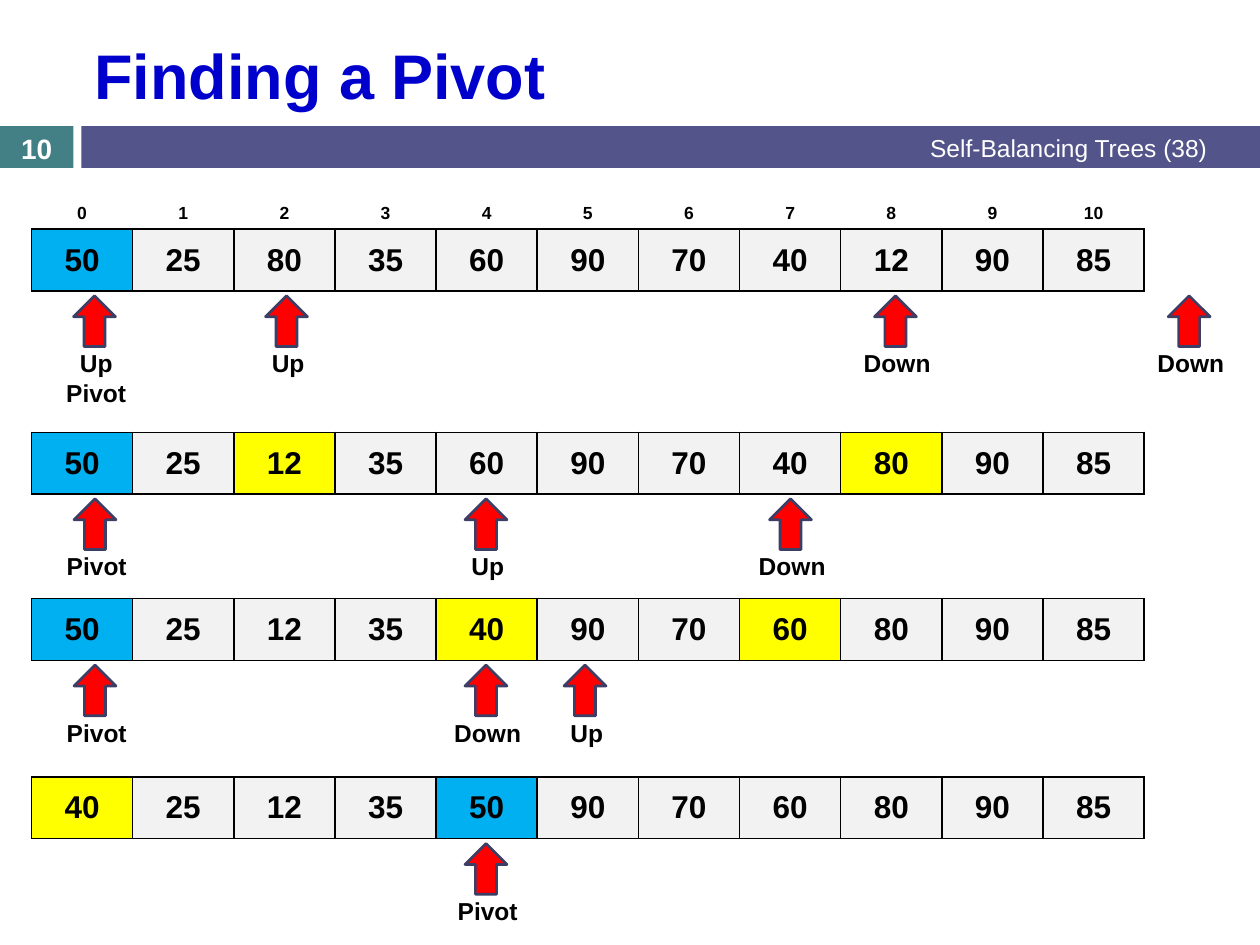
from lxml.etree import SubElement
from pptx import Presentation
from pptx.dml.color import RGBColor
from pptx.enum.shapes import MSO_SHAPE as SHAPE
from pptx.enum.text import MSO_ANCHOR as ANCHOR, PP_ALIGN as ALIGN
from pptx.oxml.ns import qn
from pptx.util import Pt


def color(fmt, value):
    if hasattr(fmt, "solid"):
        fmt.solid()
        fmt = fmt.fore_color
    else:
        fmt = fmt.color
    fmt.rgb = RGBColor.from_string(value)


def write(tf, text, size, value="000000", align=ALIGN.CENTER, bold=True):
    tf.word_wrap = True
    tf.text = text
    for p in tf.paragraphs:
        p.alignment = align
        p.font.name = "Arial"
        p.font.size = Pt(size)
        p.font.bold = bold
        color(p.font, value)


BLUE, YELLOW, GRAY = "00B0F0", "FFFF00", "F2F2F2"
CELL_W, CELL_H, HEAD_H = 57.8, 35.3, 28.8

prs = Presentation()
prs.slide_width, prs.slide_height = Pt(720), Pt(540)
s = prs.slides.add_slide(prs.slide_layouts[5])

for left, width, fill in [(0, 42, "438086"), (46.5, 673.5, "53548A")]:
    sp = s.shapes.add_shape(SHAPE.RECTANGLE, Pt(left), Pt(72), Pt(width), Pt(24))
    sp.shadow.inherit = False
    color(sp.fill, fill)
    sp.line.fill.background()

title = s.shapes.title
title.left, title.top, title.width, title.height = Pt(46.8), Pt(13.7), Pt(642.2), Pt(57.6)
write(title.text_frame, "Finding a Pivot", 36, "0000CC", ALIGN.LEFT)
title.text_frame.vertical_anchor = ANCHOR.MIDDLE

for text, left, width, size, align, bold in [
    ("Self-Balancing Trees (38)", 270, 427, 14, ALIGN.RIGHT, False),
    ("10", 0, 42, 16, ALIGN.CENTER, True),
]:
    tb = s.shapes.add_textbox(Pt(left), Pt(72.5), Pt(width), Pt(24))
    write(tb.text_frame, text, size, "FFFFFF", align, bold)
    tb.text_frame.vertical_anchor = ANCHOR.MIDDLE

steps = [
    (131, [50, 25, 80, 35, 60, 90, 70, 40, 12, 90, 85], {0: BLUE},
     [("Up\nPivot", 42), ("Down", 667.5), ("Up", 151.7), ("Down", 499.7)]),
    (247, [50, 25, 12, 35, 60, 90, 70, 40, 80, 90, 85], {0: BLUE, 2: YELLOW, 8: YELLOW},
     [("Pivot", 42.3), ("Up", 265.7), ("Down", 439.7)]),
    (342, [50, 25, 12, 35, 40, 90, 70, 60, 80, 90, 85], {0: BLUE, 4: YELLOW, 7: YELLOW},
     [("Pivot", 42.3), ("Up", 322.3), ("Down", 265.7)]),
    (444, [40, 25, 12, 35, 50, 90, 70, 60, 80, 90, 85], {0: YELLOW, 4: BLUE},
     [("Pivot", 265.7)]),
]

for step, (top, values, fills, markers) in enumerate(steps):
    heights = [HEAD_H, CELL_H] if step == 0 else [CELL_H]
    table_top = top + CELL_H - sum(heights)
    table = s.shapes.add_table(len(heights), len(values), Pt(18), Pt(table_top),
                               Pt(CELL_W * len(values)), Pt(sum(heights))).table
    table.first_row = table.horz_banding = False
    for row, height in zip(table.rows, heights):
        row.height = Pt(height)
    for i, value in enumerate(values):
        table.columns[i].width = Pt(CELL_W)
        if step == 0:
            index = table.cell(0, i)
            write(index.text_frame, str(i), 10)
            index.vertical_anchor = ANCHOR.BOTTOM
            color(index.fill, "FFFFFF")
        cell = table.cell(len(heights) - 1, i)
        write(cell.text_frame, str(value), 18)
        cell.vertical_anchor = ANCHOR.MIDDLE
        for side in "LRTB":
            ln = SubElement(cell._tc.get_or_add_tcPr(), qn(f"a:ln{side}"), w=str(Pt(1)))
            SubElement(SubElement(ln, qn("a:solidFill")), qn("a:srgbClr"), val="000000")
        color(cell.fill, fills.get(i, GRAY))

    for label, left in markers:
        sp = s.shapes.add_shape(SHAPE.UP_ARROW, Pt(left), Pt(top + 38), Pt(24), Pt(29))
        sp.shadow.inherit = False
        color(sp.fill, "FF0000")
        color(sp.line, "3D3E66")
        sp.line.width = Pt(1.5)
        label_h = 24.2 + 16.8 * label.count("\n")
        tb = s.shapes.add_textbox(Pt(left - 20), Pt(top + 64.5), Pt(66), Pt(label_h))
        write(tb.text_frame, label, 14)

prs.save("out.pptx")
